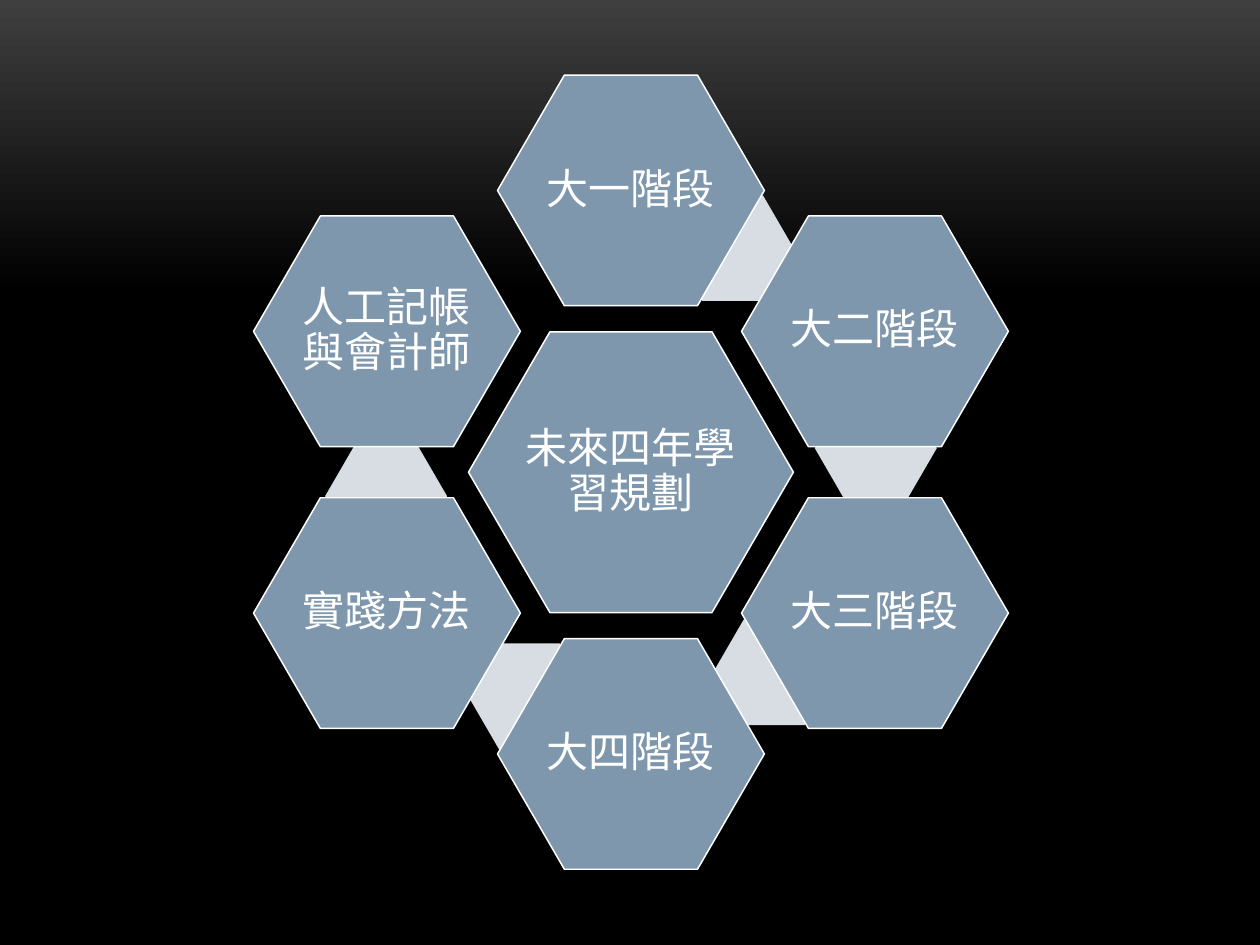
from copy import deepcopy
from dataclasses import dataclass
from math import cos, radians, sin

from pptx import Presentation
from pptx.dml.color import RGBColor
from pptx.enum.shapes import MSO_SHAPE
from pptx.enum.text import MSO_ANCHOR, PP_ALIGN
from pptx.util import Cm, Pt


@dataclass(frozen=True)
class Theme:
    font: str = "Arial Narrow"
    label_size: float = 24
    label: str = "FFFFFF"
    outline: str = "FFFFFF"
    stage: str = "7E97AD"
    link: str = "D8DDE3"
    glow: str = "3F3F3F"
    night: str = "000000"


HUB = "未來四年學習規劃"
STAGES = ["大一階段", "大二階段", "大三階段", "大四階段", "實踐方法", "人工記帳與會計師"]

# Lengths in cm, angles in degrees clockwise from the top
CENTER = (12.72, 9.52)
HUB_SIZE = (6.55, 5.66)
STAGE_SIZE = (5.38, 4.65)
LINK_SIZE = (2.46, 2.13)
STAGE_RADIUS = 5.68
LINK_RADIUS = 4.96
LINK_LEAD = 24.4


def write_text(shape, text, *, font, size, color, line_spacing=0.9, space_after=0.35):
    """Write one centred paragraph; space_after is a share of the type size."""
    frame = shape.text_frame
    frame.word_wrap = True
    frame.vertical_anchor = MSO_ANCHOR.MIDDLE
    frame.margin_left = frame.margin_right = Cm(0)
    frame.margin_top = frame.margin_bottom = Cm(0.08)
    paragraph = frame.paragraphs[0]
    paragraph.alignment = PP_ALIGN.CENTER
    paragraph.line_spacing = line_spacing
    paragraph.space_after = Pt(size * space_after)
    run = paragraph.add_run()
    run.text = text
    run.font.name = font
    run.font.size = Pt(size)
    run.font.color.rgb = RGBColor.from_string(color)


def on_ring(radius, angle):
    """Point at the given angle on a circle around the hub."""
    turn = radians(angle)
    return CENTER[0] + radius * sin(turn), CENTER[1] - radius * cos(turn)


class CycleSlide:
    def __init__(self, slide, theme):
        self.slide = slide
        self.theme = theme

    def background(self):
        fill = self.slide.background.fill
        fill.gradient()
        fill.gradient_angle = 270
        stops = zip(fill.gradient_stops, (0, 0.31), (self.theme.glow, self.theme.night))
        for stop, position, color in stops:
            stop.position = position
            stop.color.rgb = RGBColor.from_string(color)
        # Hold the dark colour to the bottom edge
        dark = self.slide.element.xpath(".//p:bg//a:gs")[-1]
        bottom = deepcopy(dark)
        bottom.set("pos", "100000")
        dark.addnext(bottom)

    def hexagon(self, center, size, color):
        (x, y), (width, height) = center, size
        shape = self.slide.shapes.add_shape(
            MSO_SHAPE.HEXAGON,
            Cm(x - width / 2), Cm(y - height / 2), Cm(width), Cm(height),
        )
        shape.adjustments[0] = 0.29
        shape.shadow.inherit = False
        shape.fill.solid()
        shape.fill.fore_color.rgb = RGBColor.from_string(color)
        shape.line.fill.background()
        return shape

    def link(self, center):
        self.hexagon(center, LINK_SIZE, self.theme.link)

    def stage(self, center, size, text):
        theme = self.theme
        shape = self.hexagon(center, size, theme.stage)
        shape.line.color.rgb = RGBColor.from_string(theme.outline)
        shape.line.width = Pt(0.85)
        write_text(shape, text, font=theme.font, size=theme.label_size, color=theme.label)


def main():
    deck = Presentation()
    deck.slide_width, deck.slide_height = Cm(25.4), Cm(19.05)
    blank_layout = deck.slide_layouts[6]
    cycle = CycleSlide(deck.slides.add_slide(blank_layout), Theme())
    cycle.background()

    # Hub
    cycle.stage(CENTER, HUB_SIZE, HUB)

    # Ring of stages, each but the last with a link towards the next
    step = 360 / len(STAGES)
    for index, text in enumerate(STAGES):
        angle = index * step
        if index < len(STAGES) - 1:
            cycle.link(on_ring(LINK_RADIUS, angle + LINK_LEAD))
        cycle.stage(on_ring(STAGE_RADIUS, angle), STAGE_SIZE, text)

    deck.save("out.pptx")


if __name__ == "__main__":
    main()
